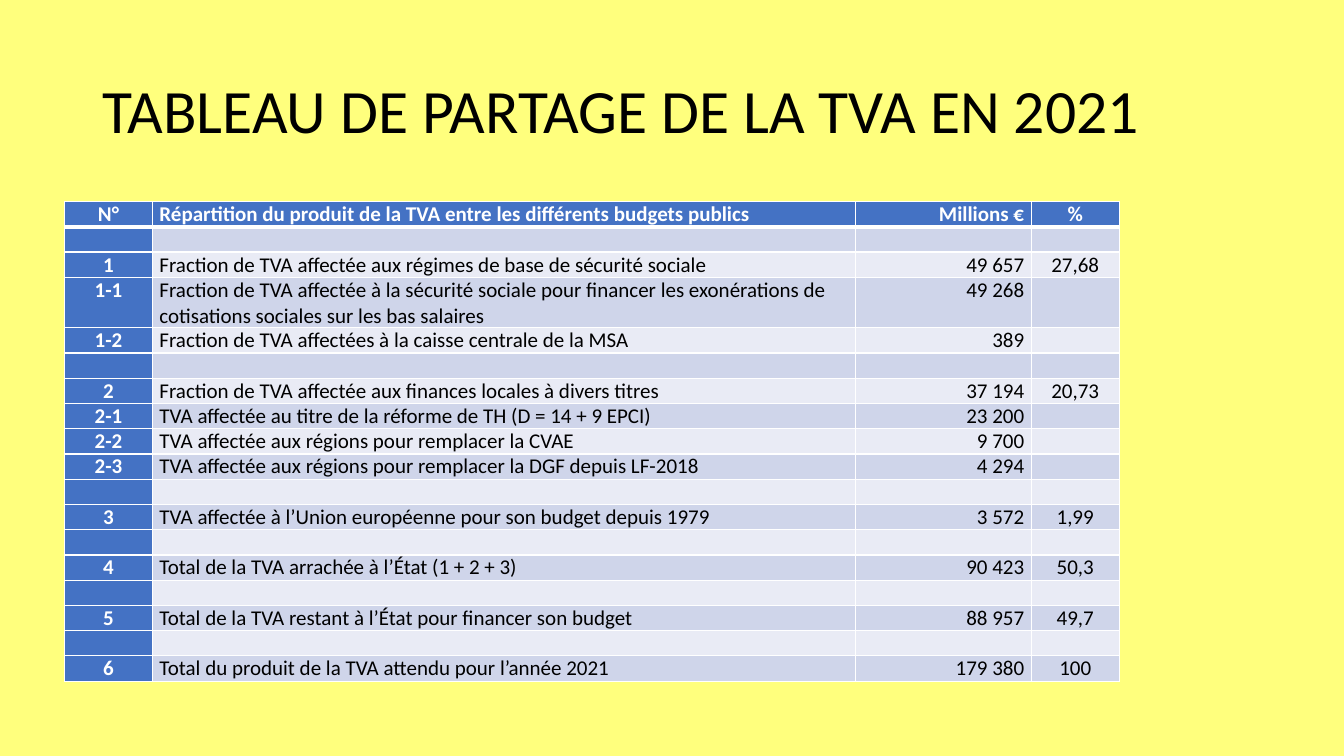
from lxml import etree
from pptx import Presentation
from pptx.dml.color import RGBColor
from pptx.enum.text import MSO_ANCHOR, PP_ALIGN
from pptx.oxml import parse_xml
from pptx.oxml.ns import nsdecls, qn
from pptx.util import Inches, Pt

LEFT, CENTER, RIGHT = PP_ALIGN.LEFT, PP_ALIGN.CENTER, PP_ALIGN.RIGHT
MIDDLE = MSO_ANCHOR.MIDDLE

THEME = {
    "font": "Calibri",
    "title_size": Pt(44),
    "table_size": Pt(15),
    "background": RGBColor.from_string("FFFF7D"),
    "text": RGBColor.from_string("000000"),
    "heading_text": RGBColor.from_string("FFFFFF"),
    "heading_fill": RGBColor.from_string("4472C4"),
    "bands": [RGBColor.from_string("E9EBF5"), RGBColor.from_string("CFD5EA")],
    "border": "FFFFFF",
}

TITLE = "TABLEAU DE PARTAGE DE LA TVA EN 2021"
BLANK = ("", "", "", "")
ROWS = [
    ("N°", "Répartition du produit de la TVA entre les différents budgets publics", "Millions €", "%"),
    BLANK,
    ("1", "Fraction de TVA affectée aux régimes de base de sécurité sociale", "49 657", "27,68"),
    ("1-1", "Fraction de TVA affectée à la sécurité sociale pour financer les exonérations de "
            "cotisations sociales sur les bas salaires", "49 268", ""),
    ("1-2", "Fraction de TVA affectées à la caisse centrale de la MSA", "389", ""),
    BLANK,
    ("2", "Fraction de TVA affectée aux finances locales à divers titres", "37 194", "20,73"),
    ("2-1", "TVA affectée au titre de la réforme de TH (D = 14 + 9 EPCI)", "23 200", ""),
    ("2-2", "TVA affectée aux régions pour remplacer la CVAE", "9 700", ""),
    ("2-3", "TVA affectée aux régions pour remplacer la DGF depuis LF-2018", "4 294", ""),
    BLANK,
    ("3", "TVA affectée à l’Union européenne pour son budget depuis 1979", "3 572", "1,99"),
    BLANK,
    ("4", "Total de la TVA arrachée à l’État (1 + 2 + 3)", "90 423", "50,3"),
    BLANK,
    ("5", "Total de la TVA restant à l’État pour financer son budget", "88 957", "49,7"),
    BLANK,
    ("6", "Total du produit de la TVA attendu pour l’année 2021", "179 380", "100"),
]
COLUMN_UNITS = [1, 8, 2, 1]
ALIGNMENTS = [CENTER, LEFT, RIGHT, CENTER]
LONG_ROW = 3


def style_text(paragraph, size, color, bold=False):
    for run in paragraph.runs:
        run.font.name = THEME["font"]
        run.font.size = size
        run.font.bold = bold
        run.font.color.rgb = color


def set_borders(cell, top, bottom):
    """Give the cell one-point sides, and top and bottom borders of the given points."""
    properties = cell._tc.get_or_add_tcPr()
    for index, (side, points) in enumerate([("L", 1), ("R", 1), ("T", top), ("B", bottom)]):
        properties.insert(index, parse_xml(
            f'<a:ln{side} {nsdecls("a")} w="{Pt(points)}"><a:solidFill>'
            f'<a:srgbClr val="{THEME["border"]}"/></a:solidFill></a:ln{side}>'))


presentation = Presentation()
presentation.slide_width = Inches(13.33)
presentation.slide_height = Inches(7.5)
slide = presentation.slides.add_slide(presentation.slide_layouts[6])
slide.background.fill.solid()
slide.background.fill.fore_color.rgb = THEME["background"]

title_box = slide.shapes.add_textbox(Inches(0.92), Inches(0.4), Inches(11.5), Inches(1.45))
title_frame = title_box.text_frame
title_frame.word_wrap = True
title_frame.vertical_anchor = MIDDLE
title_frame.text = TITLE
title_frame.paragraphs[0].line_spacing = 0.9
style_text(title_frame.paragraphs[0], THEME["title_size"], THEME["text"])

table_width, line_height = Inches(10.46), Inches(0.25)
table = slide.shapes.add_table(
    len(ROWS), len(COLUMN_UNITS), Inches(0.64), Inches(2),
    table_width, line_height * (len(ROWS) + 1)).table
for column, units in zip(table.columns, COLUMN_UNITS):
    column.width = table_width * units // sum(COLUMN_UNITS)

for row_index, texts in enumerate(ROWS):
    table.rows[row_index].height = line_height * (2 if row_index == LONG_ROW else 1)
    for column_index, text in enumerate(texts):
        heading = row_index == 0 or column_index == 0
        cell = table.cell(row_index, column_index)
        cell.margin_left = cell.margin_right = Inches(0.07)
        cell.margin_top = cell.margin_bottom = 0
        cell.fill.solid()
        cell.fill.fore_color.rgb = THEME["heading_fill"] if heading else THEME["bands"][row_index % 2]
        set_borders(cell, top=3 if row_index == 1 else 1, bottom=3 if row_index == 0 else 1)

        paragraph = cell.text_frame.paragraphs[0]
        paragraph.alignment = ALIGNMENTS[column_index]
        if text:
            paragraph.text = text
            style_text(paragraph, THEME["table_size"],
                       THEME["heading_text"] if heading else THEME["text"], heading)
        else:
            # An empty cell keeps its row low only if its end mark has the table's size.
            end_mark = etree.SubElement(paragraph._p, qn("a:endParaRPr"))
            end_mark.set("sz", str(int(THEME["table_size"].pt * 100)))

presentation.save("out.pptx")
